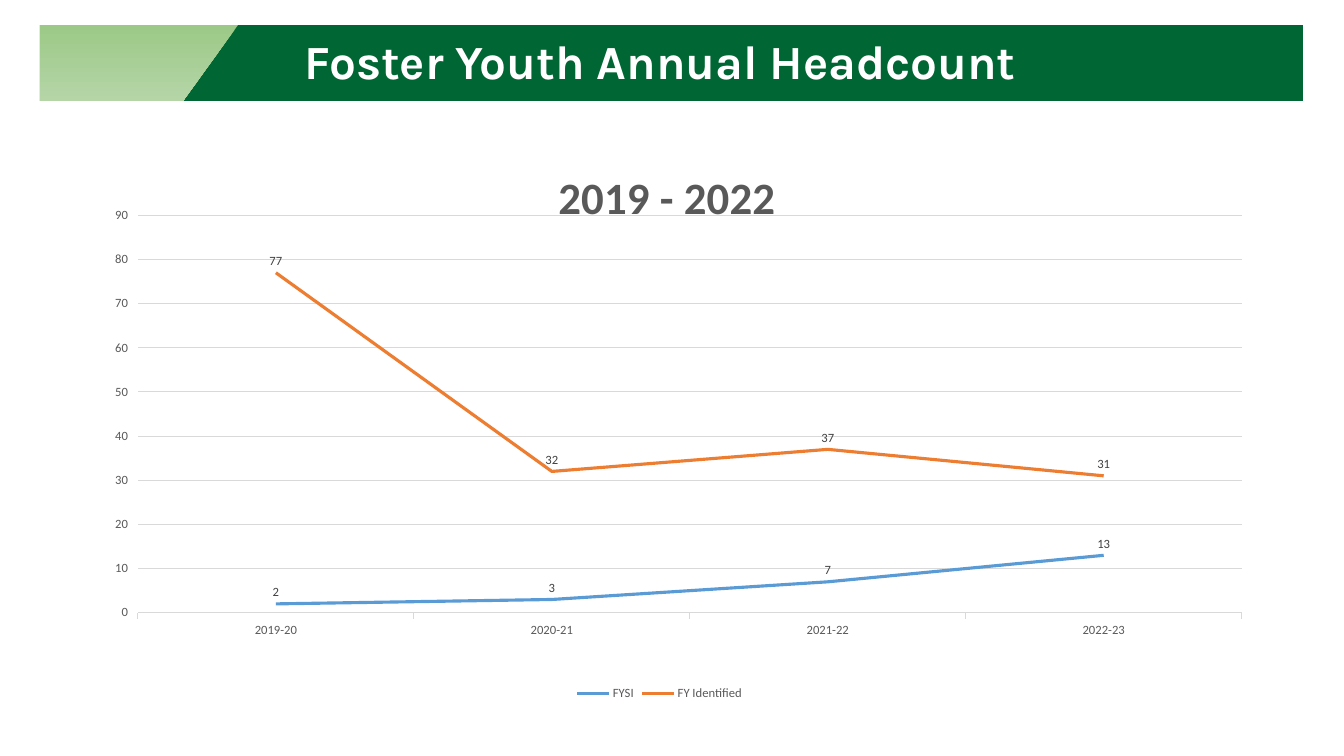
from lxml.etree import SubElement
from pptx import Presentation
from pptx.chart.data import CategoryChartData
from pptx.dml.color import RGBColor
from pptx.enum.chart import XL_CHART_TYPE, XL_LABEL_POSITION, XL_LEGEND_POSITION, XL_TICK_MARK
from pptx.enum.shapes import MSO_SHAPE
from pptx.enum.text import MSO_ANCHOR, MSO_AUTO_SIZE, PP_ALIGN
from pptx.oxml.ns import qn
from pptx.util import Pt

EMU_PER_PX = 12192000 / 1344
COLORS = {
    "band": "006633", "accent_top": "9CC987", "accent_bottom": "B5D5A7",
    "white": "FFFFFF", "gray": "595959", "label": "404040", "grid": "D9D9D9",
    "blue": "5B9BD5", "orange": "ED7D31",
}
YEARS = ["2019-20", "2020-21", "2021-22", "2022-23"]
HEADCOUNTS = [
    ("FYSI", [2, 3, 7, 13], "blue"),
    ("FY Identified", [77, 32, 37, 31], "orange"),
]


def px(length):
    return round(length * EMU_PER_PX)


def color(name):
    return RGBColor.from_string(COLORS[name])


def format_font(font, size, color_name, name="Calibri", bold=False):
    font.name = name
    font.size = Pt(size)
    font.bold = bold
    font.color.rgb = color(color_name)


def write_text(frame, text, align=PP_ALIGN.CENTER, line_spacing=None, **font_format):
    paragraph = frame.paragraphs[0]
    paragraph.alignment = align
    if line_spacing:
        paragraph.line_spacing = line_spacing
    run = paragraph.add_run()
    run.text = text
    format_font(run.font, **font_format)


def set_layout(element, position, inner=False):
    """Place a chart part by fractions of the chart's size."""
    for old in element.findall(qn("c:layout")):
        element.remove(old)
    layout = SubElement(element, qn("c:layout"))
    manual = SubElement(layout, qn("c:manualLayout"))
    settings = {"layoutTarget": "inner"} if inner else {}
    settings.update(xMode="edge", yMode="edge", **position)
    for tag, value in settings.items():
        SubElement(manual, qn(f"c:{tag}")).set("val", str(value))
    return layout


class HeadcountSlide:
    def __init__(self, presentation):
        self.slide = presentation.slides.add_slide(presentation.slide_layouts[5])
        self.shapes = self.slide.shapes

    def rectangle(self, left, top, width, height, fill):
        shape = self.shapes.add_shape(
            MSO_SHAPE.RECTANGLE, px(left), px(top), px(width), px(height))
        shape.shadow.inherit = False
        shape.fill.solid()
        shape.fill.fore_color.rgb = color(fill)
        shape.line.fill.background()

    def gradient_outline(self, points, top_color, bottom_color):
        builder = self.shapes.build_freeform(*points[0], scale=EMU_PER_PX)
        builder.add_line_segments(points[1:], close=True)
        shape = builder.convert_to_shape()
        shape.shadow.inherit = False
        shape.line.fill.background()
        shape.fill.gradient()
        shape.fill.gradient_angle = 270
        for stop, name in zip(shape.fill.gradient_stops, (top_color, bottom_color)):
            stop.color.rgb = color(name)

    def title(self, text, left, top, width, height):
        title = self.shapes.title
        title.left, title.top, title.width, title.height = map(px, (left, top, width, height))
        frame = title.text_frame
        frame.word_wrap = True
        frame.auto_size = MSO_AUTO_SIZE.NONE
        frame.vertical_anchor = MSO_ANCHOR.MIDDLE
        write_text(frame, text, line_spacing=0.9, size=34,
                   color_name="white", name="Karla", bold=True)
        # Bring the title in front of the band
        title.element.getparent().append(title.element)

    def line_chart(self, heading, left, top, width, height):
        data = CategoryChartData()
        data.categories = YEARS
        for name, values, _ in HEADCOUNTS:
            data.add_series(name, values)
        chart = self.shapes.add_chart(
            XL_CHART_TYPE.LINE, px(left), px(top), px(width), px(height), data).chart
        chart.font.name = "Calibri"
        chart.font.size = Pt(10)

        # Heading and plot area
        write_text(chart.chart_title.text_frame, heading, size=32, color_name="gray", bold=True)
        title_element = chart.chart_title._element
        layout = set_layout(title_element, {"x": 0.41, "y": 0.05})
        title_element.find(qn("c:tx")).addnext(layout)
        chart.chart_title.include_in_layout = False
        plot_area = chart._chartSpace.chart.plotArea
        plot_position = {"x": 0.07, "y": 0.15, "w": 0.91, "h": 0.69}
        plot_area.insert(0, set_layout(plot_area, plot_position, inner=True))

        # Axes
        for axis in (chart.category_axis, chart.value_axis):
            axis.major_tick_mark = XL_TICK_MARK.OUTSIDE
            format_font(axis.tick_labels.font, 9, "gray")
        value_axis = chart.value_axis
        value_axis.minimum_scale, value_axis.maximum_scale = 0, 90
        value_axis.major_unit = 10
        value_axis.format.line.fill.background()
        for line in (chart.category_axis.format.line, value_axis.major_gridlines.format.line):
            line.color.rgb = color("grid")
            line.width = Pt(0.75)

        # Legend
        chart.has_legend = True
        chart.legend.position = XL_LEGEND_POSITION.BOTTOM
        chart.legend.include_in_layout = False
        format_font(chart.legend.font, 9, "gray")

        # Series lines and labels
        chart.plots[0].vary_by_categories = False
        for series, (_, _, line_color) in zip(chart.plots[0].series, HEADCOUNTS):
            series.smooth = False
            series.format.line.color.rgb = color(line_color)
            series.format.line.width = Pt(2.25)
            labels = series.data_labels
            labels.show_value = True
            labels.position = XL_LABEL_POSITION.ABOVE
            format_font(labels.font, 9, "label")


def main():
    presentation = Presentation()
    presentation.slide_width, presentation.slide_height = px(1344), px(756)
    slide = HeadcountSlide(presentation)

    # Header band
    slide.rectangle(40, 25, 1263, 76, "band")
    slide.gradient_outline([(40, 25), (238, 25), (183, 101), (40, 101)],
                           "accent_top", "accent_bottom")
    slide.title("Foster Youth Annual Headcount", 81, 35, 1159, 58)

    # Headcount by year
    slide.line_chart("2019 - 2022", 53, 129, 1213, 576)
    presentation.save("out.pptx")


if __name__ == "__main__":
    main()
